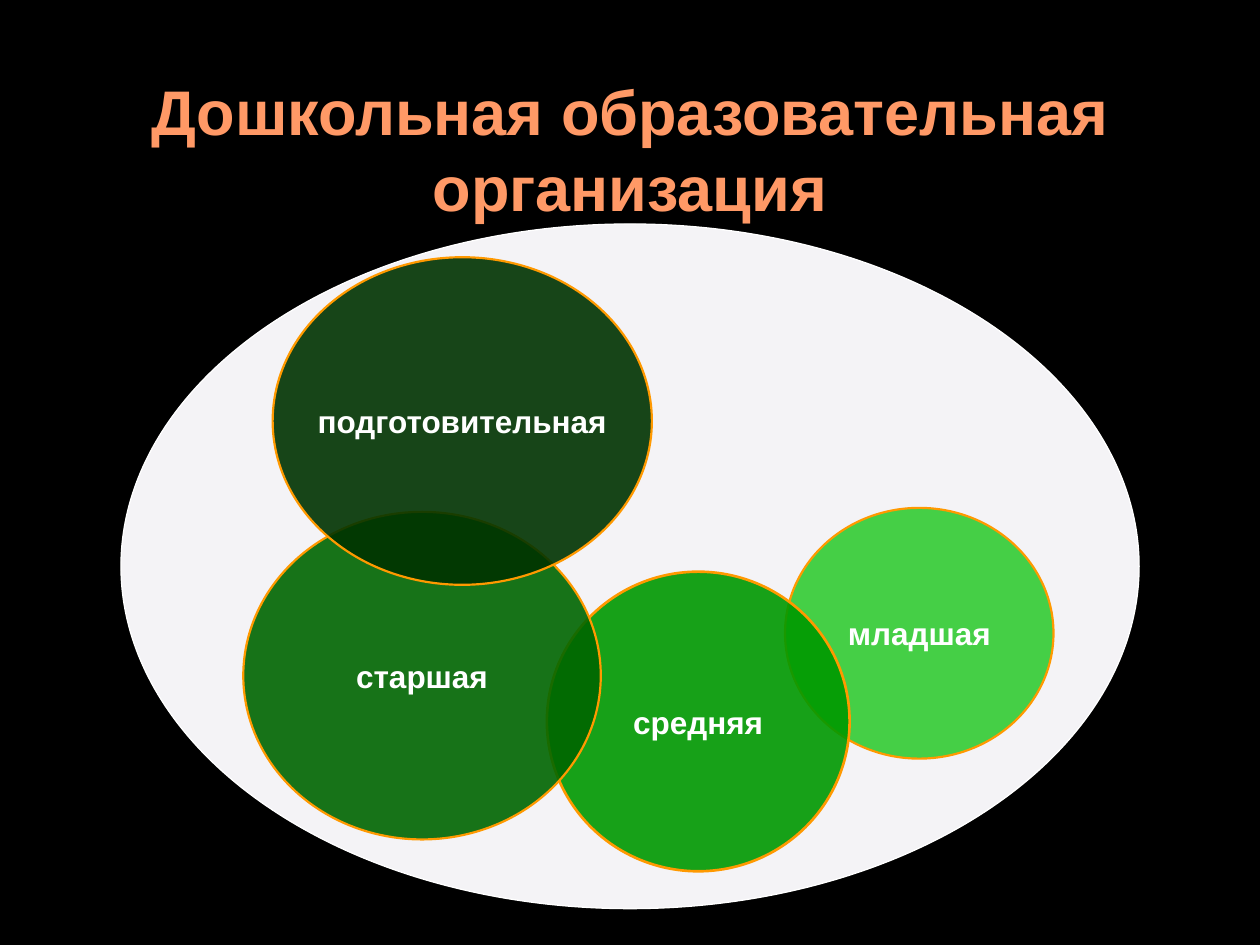
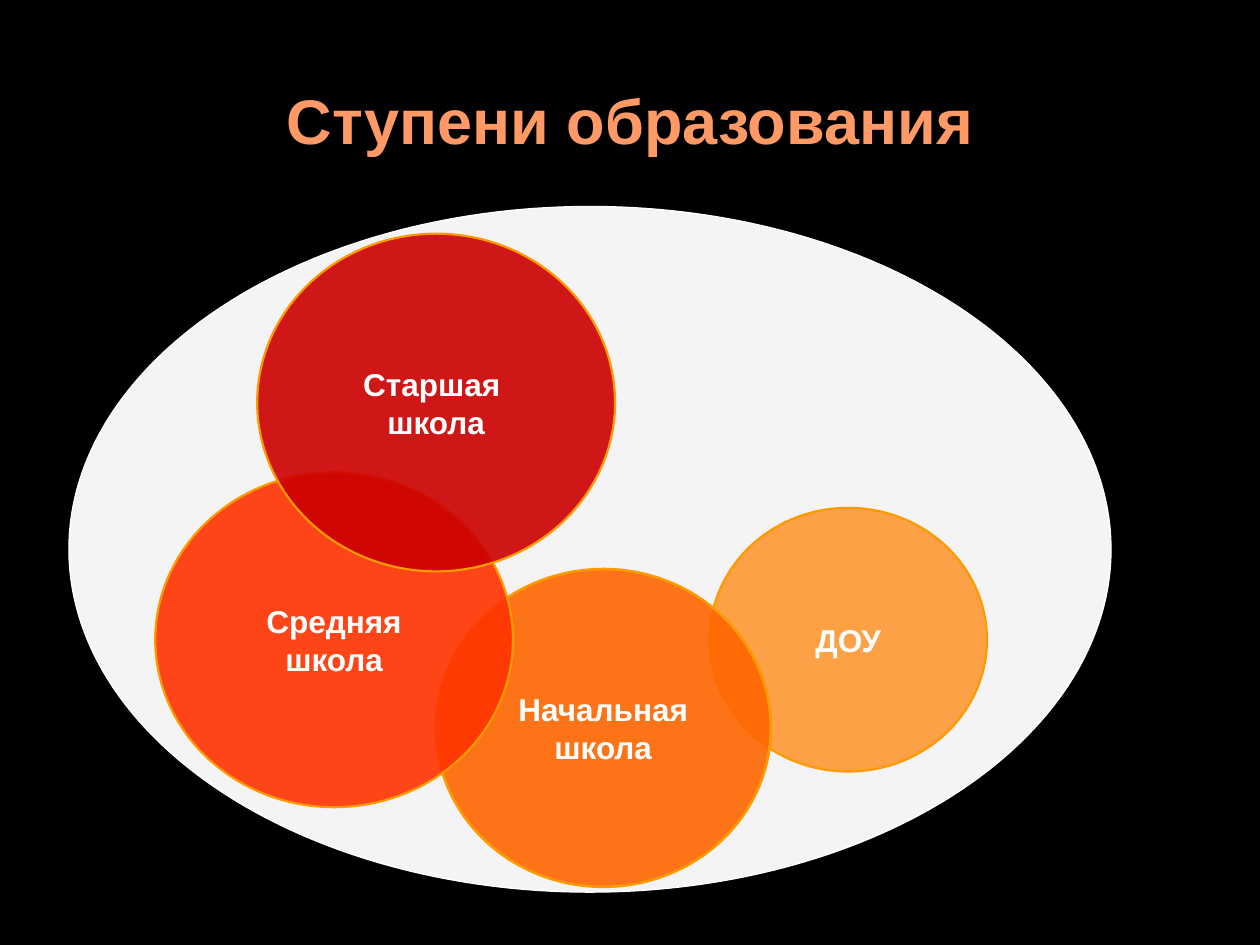
from lxml import etree
from pptx import Presentation
from pptx.dml.color import RGBColor
from pptx.enum.shapes import MSO_SHAPE
from pptx.enum.text import MSO_ANCHOR, MSO_AUTO_SIZE, PP_ALIGN
from pptx.oxml.ns import qn
from pptx.util import Pt

OVAL = MSO_SHAPE.OVAL
TOP, MIDDLE = MSO_ANCHOR.TOP, MSO_ANCHOR.MIDDLE
CENTER = PP_ALIGN.CENTER
NO_AUTOFIT = MSO_AUTO_SIZE.NONE
TITLE_ONLY = 5
FONT = "Arial"
OPACITY = 90

COLORS = {
    "background": "000000",
    "title": "FF9966",
    "field": "F4F3F6",
    "white": "FFFFFF",
    "outline": "FF9900",
    "light_green": "33CC33",
    "green": "009900",
    "deep_green": "006600",
    "dark_green": "003300",
    "light_orange": "FF9933",
    "orange": "FF6600",
    "orange_red": "FF3300",
    "red": "CC0000",
}

STAGES = [
    {
        "title": "Дошкольная образовательная организация",
        "title_top": 38,
        "field": (69.1, 128, 581.8, 391.2),
        "groups": [
            ("младшая", "light_green", (448.6, 290.2, 153.4, 143.3), 1.25),
            ("средняя", "green", (312.5, 326.7, 173, 171.2), 1.5),
            ("старшая", "deep_green", (139, 292.5, 204.3, 187.2), 1.25),
            ("подготовительная", "dark_green", (155.8, 147, 216.7, 187.2), 1.25),
        ],
    },
    {
        "title": "Ступени образования",
        "title_top": 43.2,
        "field": (39.4, 118, 595.5, 391.8),
        "groups": [
            ("ДОУ", "light_orange", (405.4, 290.2, 158.6, 150.7), 1.25),
            ("Начальная\nшкола", "orange", (249, 325.2, 191.5, 181.6), 1.5),
            ("Средняя\nшкола", "orange_red", (88.7, 269.9, 204.4, 191.4), 1.25),
            ("Старшая \nшкола", "red", (147, 133.5, 204.5, 193), 1.25),
        ],
    },
]


def color(name):
    return RGBColor.from_string(COLORS[name])


def format_text(frame, size, color_name, anchor):
    frame.vertical_anchor = anchor
    for paragraph in frame.paragraphs:
        paragraph.alignment = CENTER
        for run in paragraph.runs:
            run.font.name = FONT
            run.font.size = Pt(size)
            run.font.bold = True
            run.font.color.rgb = color(color_name)


def add_title(slide, text, top):
    title = slide.shapes.title
    title.left, title.top, title.width, title.height = map(Pt, (36, top, 648, 90))
    frame = title.text_frame
    frame.text = text
    frame.word_wrap = True
    frame.auto_size = NO_AUTOFIT
    format_text(frame, 36, "title", TOP)


def add_ellipse(slide, bounds, fill, outline, weight):
    ellipse = slide.shapes.add_shape(OVAL, *map(Pt, bounds))
    ellipse.shadow.inherit = False
    ellipse.fill.solid()
    ellipse.fill.fore_color.rgb = color(fill)
    ellipse.line.color.rgb = color(outline)
    ellipse.line.width = Pt(weight)
    return ellipse


def add_group(slide, label, fill, bounds, weight):
    group = add_ellipse(slide, bounds, fill, "outline", weight)
    fill_color = group._element.spPr.find(qn("a:solidFill"))[0]
    etree.SubElement(fill_color, qn("a:alpha"), val=str(OPACITY * 1000))
    frame = group.text_frame
    frame.text = label
    frame.word_wrap = False
    format_text(frame, 18, "white", MIDDLE)


def add_stage_slide(prs, stage):
    slide = prs.slides.add_slide(prs.slide_layouts[TITLE_ONLY])
    add_title(slide, stage["title"], stage["title_top"])
    add_ellipse(slide, stage["field"], "field", "white", 0.75)
    for group in stage["groups"]:
        add_group(slide, *group)


def main():
    prs = Presentation()
    prs.slide_width, prs.slide_height = Pt(720), Pt(540)
    background = prs.slide_master.background.fill
    background.solid()
    background.fore_color.rgb = color("background")
    for stage in STAGES:
        add_stage_slide(prs, stage)
    prs.save("out.pptx")


if __name__ == "__main__":
    main()
